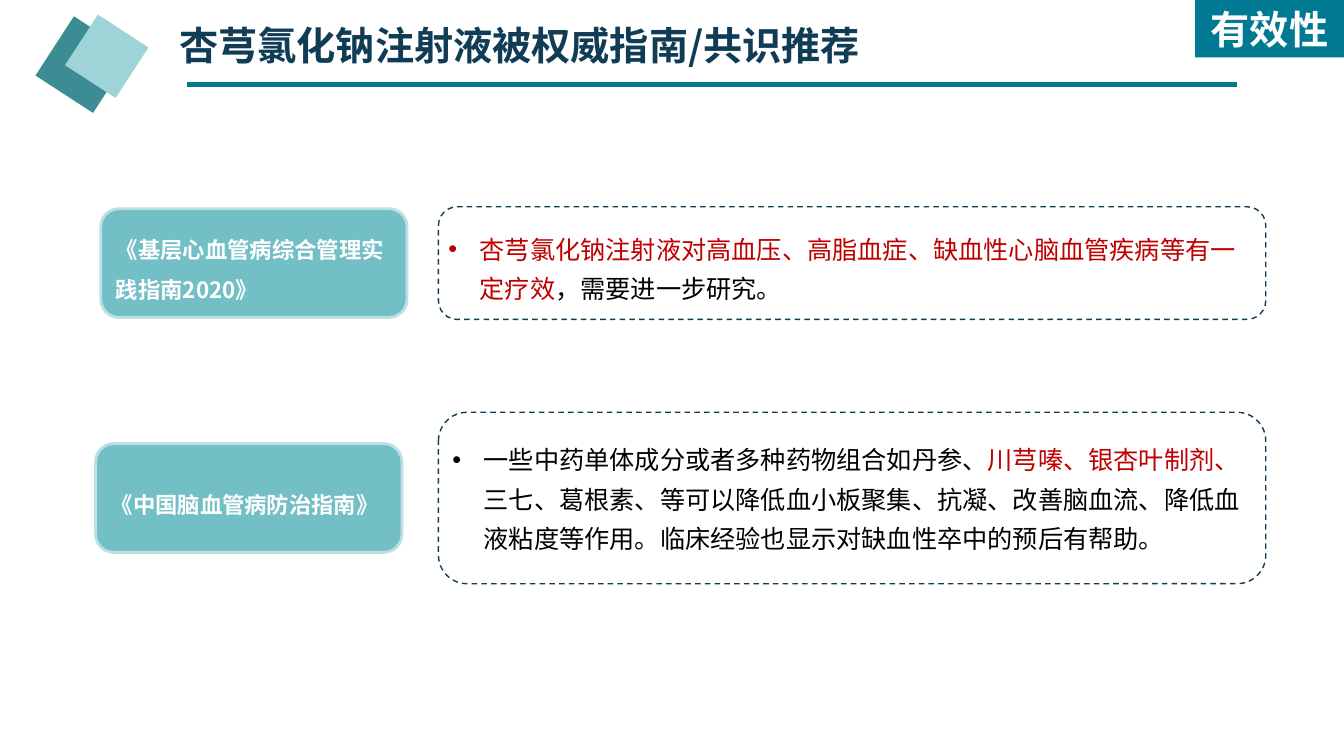
from lxml import etree
from pptx import Presentation
from pptx.dml.color import RGBColor
from pptx.enum import dml, shapes, text
from pptx.oxml import ns
from pptx.util import Cm, Pt

TEAL = RGBColor(0x00, 0x79, 0x93)
DARK_TEAL = RGBColor(0x3C, 0x8C, 0x93)
PALE_TEAL = RGBColor(0x9E, 0xD3, 0xD7)
LABEL_FILL = RGBColor(0x72, 0xBF, 0xC5)
LABEL_EDGE = RGBColor(0xBB, 0xE0, 0xE3)
NAVY = RGBColor(0x10, 0x3C, 0x55)
RED = RGBColor(0xC0, 0x00, 0x00)
BLACK = RGBColor(0x00, 0x00, 0x00)
WHITE = RGBColor(0xFF, 0xFF, 0xFF)

CJK_FONT = "Noto Sans CJK SC"
RECT = shapes.MSO_SHAPE.RECTANGLE
ROUNDED = shapes.MSO_SHAPE.ROUNDED_RECTANGLE

# Each guideline: label text, label box, frame box, finding box, finding runs
GUIDELINES = [
    ("《基层心血管病综合管理实践指南2020》",
     (2.54, 5.26, 7.72, 2.74), (11.05, 5.21, 20.85, 2.84),
     (11.05, 5.54, 20.42, 2.16),
     [("杏芎氯化钠注射液对高血压、高脂血症、缺血性心脑血管疾病等有一定疗效", RED),
      ("，需要进一步研究。", BLACK)]),
    ("《中国脑血管病防治指南》",
     (2.41, 11.18, 7.72, 2.74), (11.05, 10.39, 20.85, 4.32),
     (11.15, 10.85, 20.85, 3.15),
     [("一些中药单体成分或者多种药物组合如丹参、", BLACK),
      ("川芎嗪、银杏叶制剂、", RED),
      ("三七、葛根素、等可以降低血小板聚集、抗凝、改善脑血流、降低血液粘度等作用。"
       "临床经验也显示对缺血性卒中的预后有帮助。", BLACK)]),
]


def in_cm(box):
    return [Cm(length) for length in box]


def add_run(paragraph, words, size, color, bold=False, font=CJK_FONT):
    """Add a run whose Latin and East Asian fonts are the same."""
    run = paragraph.add_run()
    run.text = words
    run.font.size = Pt(size)
    run.font.bold = bold
    run.font.color.rgb = color
    run.font.name = font
    east_asian = etree.SubElement(run.font._element, ns.qn("a:ea"))
    east_asian.set("typeface", font)


def add_panel(slide, kind, box, fill=None, edge=None, width=1, rotation=0):
    panel = slide.shapes.add_shape(kind, *in_cm(box))
    panel.shadow.inherit = False
    panel.rotation = rotation
    if fill is None:
        panel.fill.background()
    else:
        panel.fill.solid()
        panel.fill.fore_color.rgb = fill
    if edge is None:
        panel.line.fill.background()
    else:
        panel.line.color.rgb = edge
        panel.line.width = Pt(width)
    return panel


def add_header_rule(slide):
    rule = slide.shapes.add_connector(
        shapes.MSO_CONNECTOR.STRAIGHT, *in_cm((4.72, 2.13, 31.17, 2.13)))
    rule.line.color.rgb = TEAL
    rule.line.width = Pt(3)
    etree.SubElement(rule._element.spPr, ns.qn("a:effectLst"))


def add_tag(slide, words):
    tag = add_panel(slide, RECT, (30.12, 0, 3.75, 1.45), TEAL)
    paragraph = tag.text_frame.paragraphs[0]
    paragraph.alignment = text.PP_ALIGN.CENTER
    add_run(paragraph, words, 28, WHITE, True, "Arial")


def set_title(slide, words):
    title = slide.shapes.title
    title.left, title.top, title.width, title.height = in_cm((4.52, 0.66, 23.42, 1.57))
    frame = title.text_frame
    frame.margin_left = frame.margin_right = frame.margin_top = frame.margin_bottom = 0
    frame.vertical_anchor = text.MSO_ANCHOR.TOP
    frame.auto_size = text.MSO_AUTO_SIZE.NONE
    paragraph = frame.paragraphs[0]
    paragraph.alignment = text.PP_ALIGN.LEFT
    paragraph.line_spacing = 0.9
    paragraph.space_before = Pt(0)
    add_run(paragraph, words, 28, NAVY, True)


def add_label(slide, box, words):
    label = add_panel(slide, ROUNDED, box, LABEL_FILL, LABEL_EDGE, 2)
    label.text_frame.vertical_anchor = text.MSO_ANCHOR.MIDDLE
    paragraph = label.text_frame.paragraphs[0]
    paragraph.alignment = text.PP_ALIGN.LEFT
    paragraph.line_spacing = 1.5
    add_run(paragraph, words, 16, WHITE, True)


def add_finding(slide, box, runs):
    """Add one bulleted paragraph made of coloured runs."""
    finding = slide.shapes.add_textbox(*in_cm(box))
    finding.text_frame.word_wrap = True
    paragraph = finding.text_frame.paragraphs[0]
    paragraph.line_spacing = 1.3
    properties = paragraph._p.get_or_add_pPr()
    properties.set("marL", str(Cm(0.79)))
    properties.set("indent", str(-Cm(0.79)))
    etree.SubElement(properties, ns.qn("a:buFont")).set("typeface", "Arial")
    etree.SubElement(properties, ns.qn("a:buChar")).set("char", "•")
    for words, color in runs:
        add_run(paragraph, words, 18, color)


def main():
    deck = Presentation()
    deck.slide_width, deck.slide_height = Cm(33.87), Cm(19.05)
    slide = deck.slides.add_slide(deck.slide_layouts[5])

    add_header_rule(slide)
    add_panel(slide, RECT, (1.24, 0.74, 1.73, 1.78), DARK_TEAL, rotation=33)
    add_panel(slide, RECT, (1.93, 0.66, 1.52, 1.52), PALE_TEAL, rotation=33)
    add_tag(slide, "有效性")
    set_title(slide, "杏芎氯化钠注射液被权威指南/共识推荐")

    for name, label_box, frame_box, finding_box, runs in GUIDELINES:
        frame = add_panel(slide, ROUNDED, frame_box, edge=NAVY)
        frame.line.dash_style = dml.MSO_LINE.DASH
        add_label(slide, label_box, name)
        add_finding(slide, finding_box, runs)

    deck.save("out.pptx")


if __name__ == "__main__":
    main()
